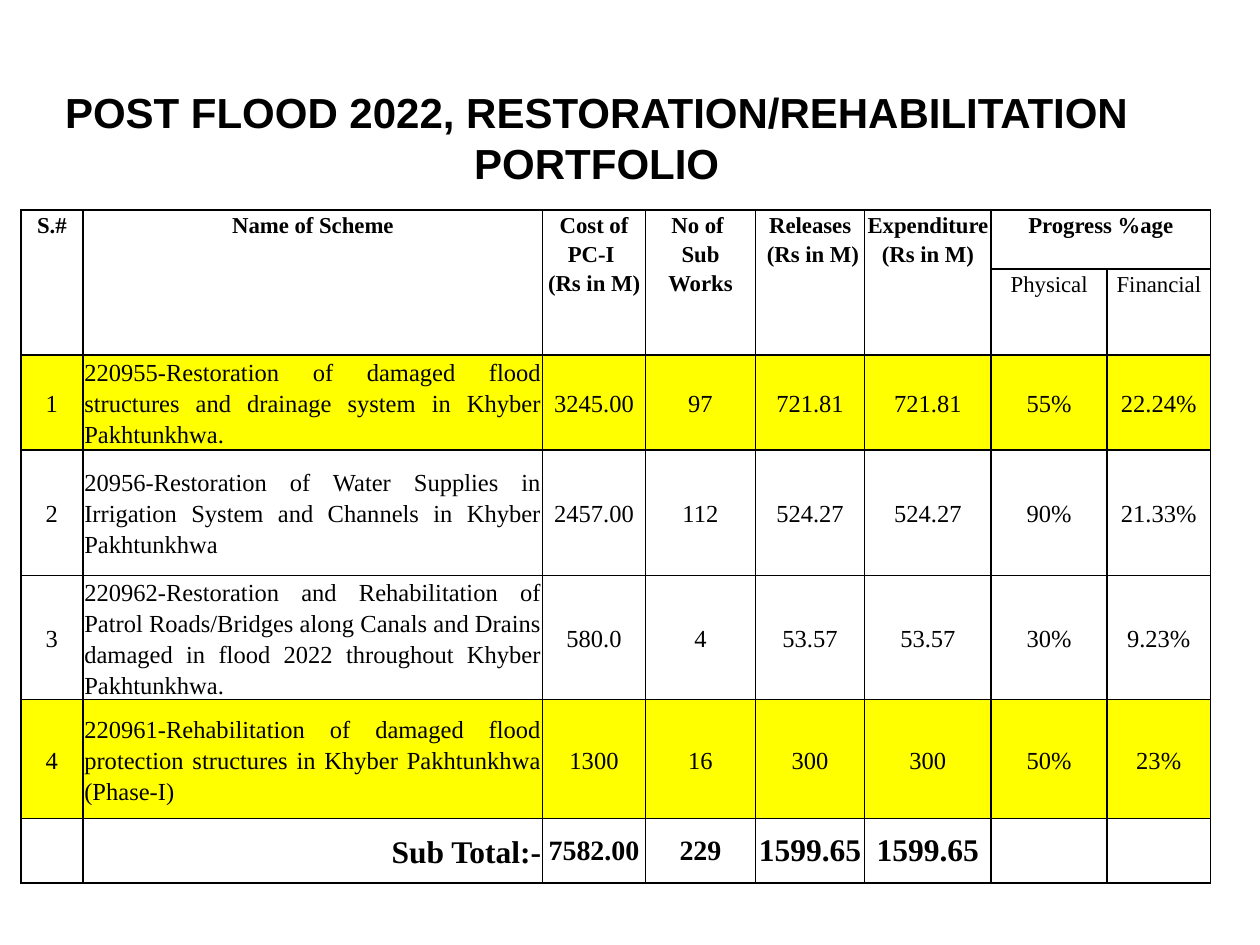
from dataclasses import dataclass

import pptx
import pptx.dml.color
import pptx.enum.text
import pptx.oxml
import pptx.oxml.ns
import pptx.util

Cm = pptx.util.Cm
Pt = pptx.util.Pt
Align = pptx.enum.text.PP_ALIGN
Anchor = pptx.enum.text.MSO_ANCHOR


@dataclass(frozen=True)
class Theme:
    ink: str = "000000"
    highlight: str = "FFFF00"
    title_font: str = "Arial"
    table_font: str = "Times New Roman"
    title_size: int = 24
    header_size: int = 13
    body_size: int = 14
    total_size: int = 16
    large_total_size: int = 18
    border_width: int = 1
    table_spacing: float = 1.15


@dataclass(frozen=True)
class TextStyle:
    font: str
    size: int
    bold: bool = False
    align: Align = Align.CENTER
    spacing: float = 1.0


@dataclass(frozen=True)
class HeaderCell:
    row: int
    column: int
    text: str
    last_row: int
    last_column: int
    bold: bool = True


@dataclass(frozen=True)
class Scheme:
    number: str
    name: str
    figures: tuple[str, ...]
    highlighted: bool = False


THEME = Theme()
TITLE = "POST FLOOD 2022, RESTORATION/REHABILITATION PORTFOLIO"
COLUMN_WIDTHS = (1.25, 9.27, 2.07, 2.22, 2.2, 2.55, 2.34, 2.08)
ROW_HEIGHTS = (1.19, 1.3, 1.91, 2.53, 2.26, 2.39, 1.3)
HEADER_ROWS = 2

TALL_HEADERS = (
    "S.#",
    "Name of Scheme",
    "Cost of PC-I \n(Rs in M)",
    "No of \nSub Works",
    "Releases\n (Rs in M)",
    "Expenditure \n(Rs in M)",
)
HEADERS = [HeaderCell(0, column, text, 1, column) for column, text in enumerate(TALL_HEADERS)] + [
    HeaderCell(0, 6, "Progress %age", 0, 7),
    HeaderCell(1, 6, "Physical", 1, 6, bold=False),
    HeaderCell(1, 7, "Financial", 1, 7, bold=False),
]
SCHEMES = (
    Scheme(
        "1",
        "220955-Restoration of damaged flood structures and drainage system in Khyber Pakhtunkhwa. ",
        ("3245.00", "97", "721.81", "721.81", "55%", "22.24%"),
        highlighted=True,
    ),
    Scheme(
        "2",
        "20956-Restoration of Water Supplies in Irrigation System and Channels in Khyber Pakhtunkhwa",
        ("2457.00", "112", "524.27", "524.27", "90%", "21.33%"),
    ),
    Scheme(
        "3",
        "220962-Restoration and Rehabilitation of Patrol Roads/Bridges along Canals and Drains "
        "damaged in flood 2022 throughout Khyber Pakhtunkhwa.",
        ("580.0", "4", "53.57", "53.57", "30%", "9.23%"),
    ),
    Scheme(
        "4",
        "220961-Rehabilitation of damaged flood protection structures in Khyber Pakhtunkhwa (Phase-I)",
        ("1300", "16", "300", "300", "50%", "23%"),
        highlighted=True,
    ),
)
TOTALS = (
    ("7582.00", THEME.total_size),
    ("229", THEME.total_size),
    ("1599.65", THEME.large_total_size),
    ("1599.65", THEME.large_total_size),
)


def set_attributes(target: object, values: dict[str, object]) -> None:
    for name, value in values.items():
        setattr(target, name, value)


def write_text(text_frame: pptx.text.text.TextFrame, text: str, style: TextStyle) -> None:
    """Write one paragraph for each line of text."""
    for index, line in enumerate(text.split("\n")):
        paragraph = text_frame.paragraphs[0] if index == 0 else text_frame.add_paragraph()
        set_attributes(paragraph, {"alignment": style.align, "line_spacing": style.spacing})
        run = paragraph.add_run()
        run.text = line
        set_attributes(run.font, {"name": style.font, "size": Pt(style.size), "bold": style.bold})
        run.font.color.rgb = pptx.dml.color.RGBColor.from_string(THEME.ink)


def draw_borders(cell: pptx.table._Cell) -> None:
    properties = cell._tc.get_or_add_tcPr()
    for side in ("lnL", "lnR", "lnT", "lnB"):
        properties.append(pptx.oxml.parse_xml(
            f'<a:{side} {pptx.oxml.ns.nsdecls("a")} w="{Pt(THEME.border_width)}">'
            f'<a:solidFill><a:srgbClr val="{THEME.ink}"/></a:solidFill></a:{side}>'
        ))


def write_cell(cell: pptx.table._Cell, text: str, style: TextStyle,
               anchor: Anchor = Anchor.MIDDLE, side_margin: float = 0.03) -> None:
    set_attributes(cell, {
        "margin_left": Cm(side_margin),
        "margin_right": Cm(side_margin),
        "margin_top": 0,
        "margin_bottom": 0,
        "vertical_anchor": anchor,
    })
    write_text(cell.text_frame, text, style)


def table_style(size: int, bold: bool = False, align: Align = Align.CENTER) -> TextStyle:
    return TextStyle(THEME.table_font, size, bold, align, THEME.table_spacing)


def add_title(slide: pptx.slide.Slide) -> None:
    shape = slide.shapes.add_textbox(Cm(0.64), Cm(1.7), Cm(22.78), Cm(2.13))
    set_attributes(shape.text_frame, {
        "word_wrap": True,
        "vertical_anchor": Anchor.MIDDLE,
        "margin_left": Cm(0.08),
        "margin_right": Cm(0.08),
        "margin_top": Cm(0.03),
        "margin_bottom": Cm(0.03),
    })
    write_text(shape.text_frame, TITLE, TextStyle(THEME.title_font, THEME.title_size, True))


def add_empty_table(slide: pptx.slide.Slide) -> pptx.table.Table:
    """Add the bordered, unfilled grid."""
    table = slide.shapes.add_table(
        len(ROW_HEIGHTS), len(COLUMN_WIDTHS), Cm(0.42), Cm(4.23),
        Cm(sum(COLUMN_WIDTHS)), Cm(sum(ROW_HEIGHTS)),
    ).table
    set_attributes(table, {"first_row": False, "horz_banding": False})
    for column, width in zip(table.columns, COLUMN_WIDTHS):
        column.width = Cm(width)
    for row, height in zip(table.rows, ROW_HEIGHTS):
        row.height = Cm(height)
    for cell in table.iter_cells():
        draw_borders(cell)
        cell.fill.background()
    return table


def write_headers(table: pptx.table.Table) -> None:
    for header in HEADERS:
        cell = table.cell(header.row, header.column)
        if (header.last_row, header.last_column) != (header.row, header.column):
            cell.merge(table.cell(header.last_row, header.last_column))
        write_cell(cell, header.text, table_style(THEME.header_size, header.bold), Anchor.TOP)


def write_schemes(table: pptx.table.Table) -> None:
    for row, scheme in enumerate(SCHEMES, HEADER_ROWS):
        for column, text in enumerate((scheme.number, scheme.name, *scheme.figures)):
            cell = table.cell(row, column)
            align = Align.JUSTIFY if column == 1 else Align.CENTER
            write_cell(cell, text, table_style(THEME.body_size, align=align))
            if scheme.highlighted:
                cell.fill.solid()
                cell.fill.fore_color.rgb = pptx.dml.color.RGBColor.from_string(THEME.highlight)


def write_totals(table: pptx.table.Table) -> None:
    row = HEADER_ROWS + len(SCHEMES)
    write_cell(table.cell(row, 1), "Sub Total:-", table_style(THEME.large_total_size, True, Align.RIGHT))
    for column, (text, size) in enumerate(TOTALS, 2):
        write_cell(table.cell(row, column), text, TextStyle(THEME.table_font, size, True), side_margin=0)


def main() -> None:
    presentation = pptx.Presentation()
    set_attributes(presentation, {"slide_width": Cm(25.4), "slide_height": Cm(19.05)})
    slide = presentation.slides.add_slide(presentation.slide_layouts[6])
    table = add_empty_table(slide)
    write_headers(table)
    write_schemes(table)
    write_totals(table)
    add_title(slide)
    presentation.save("out.pptx")


if __name__ == "__main__":
    main()
